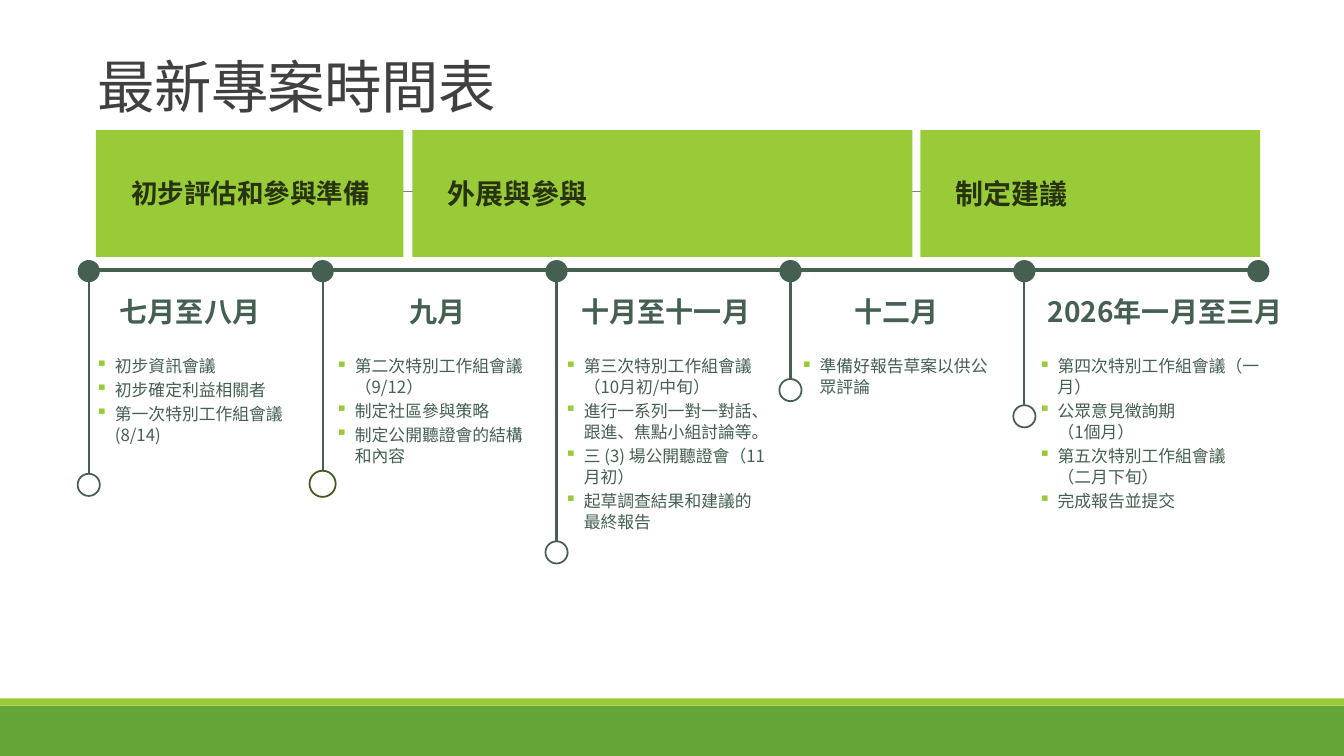
from lxml import etree
from pptx import Presentation
from pptx import util as u
from pptx.dml import color
from pptx.enum import shapes, text
from pptx.oxml import ns

LIME, GREEN, DARK, WHITE = "99CB38", "63A537", "455F51", "FFFFFF"
OLIVE, BAND_TEXT, TITLE_TEXT, GREY = "435919", "26330D", "404040", "808080"
FIRST_NODE, NODE_STEP, AXIS_Y = 0.88, 2.32, 2.68
DOT, LARGE_RING = 0.22, 0.26


def rgb(value):
    return color.RGBColor.from_string(value)


class TimelineSlide:
    font = "Noto Sans CJK SC"

    def __init__(self, presentation):
        self.slide = presentation.slides.add_slide(presentation.slide_layouts[6])

    def shape(self, kind, left, top, width, height, fill=None, line=None):
        shape = self.slide.shapes.add_shape(
            kind, u.Inches(left), u.Inches(top), u.Inches(width), u.Inches(height))
        shape.shadow.inherit = False
        if fill:
            shape.fill.solid()
            shape.fill.fore_color.rgb = rgb(fill)
        else:
            shape.fill.background()
        if line:
            shape.line.color.rgb = rgb(line)
            shape.line.width = u.Pt(1.25)
        else:
            shape.line.fill.background()
        return shape

    def rectangle(self, left, top, width, height, fill):
        return self.shape(shapes.MSO_SHAPE.RECTANGLE, left, top, width, height, fill)

    def circle(self, x, y, size, fill=None, line=None):
        return self.shape(shapes.MSO_SHAPE.OVAL, x - size / 2, y - size / 2,
                          size, size, fill, line)

    def line(self, x1, y1, x2, y2, ink, width):
        line = self.slide.shapes.add_connector(
            shapes.MSO_CONNECTOR.STRAIGHT,
            u.Inches(x1), u.Inches(y1), u.Inches(x2), u.Inches(y2))
        line.line.color.rgb = rgb(ink)
        line.line.width = u.Pt(width)
        etree.SubElement(line._element.spPr, ns.qn("a:effectLst"))

    def frame(self, shape, insets, anchor=text.MSO_ANCHOR.TOP):
        frame = shape.text_frame
        frame.word_wrap = True
        frame.vertical_anchor = anchor
        (frame.margin_left, frame.margin_top,
         frame.margin_right, frame.margin_bottom) = map(u.Inches, insets)
        return frame

    def text_box(self, left, top, width, height, insets, anchor=text.MSO_ANCHOR.TOP):
        box = self.slide.shapes.add_textbox(
            u.Inches(left), u.Inches(top), u.Inches(width), u.Inches(height))
        return self.frame(box, insets, anchor)

    def style_text(self, paragraph, words, size, ink, bold=False, spacing=0.9,
                   align=text.PP_ALIGN.LEFT, after=2, tracking=0):
        paragraph.text = words
        paragraph.alignment = align
        paragraph.line_spacing = spacing
        paragraph.space_after = u.Pt(after)
        for run in paragraph.runs:
            run.font.size = u.Pt(size)
            run.font.bold = bold
            run.font.color.rgb = rgb(ink)
            run.font.name = self.font
            properties = run._r.get_or_add_rPr()
            etree.SubElement(properties, ns.qn("a:ea"), typeface=self.font)
            if tracking:
                properties.set("spc", str(tracking))

    def bullet(self, paragraph):
        properties = paragraph._p.get_or_add_pPr()
        indent = u.Inches(0.19)
        properties.set("marL", str(indent))
        properties.set("indent", str(-indent))
        bullet_color = etree.SubElement(properties, ns.qn("a:buClr"))
        etree.SubElement(bullet_color, ns.qn("a:srgbClr"), val=LIME)
        etree.SubElement(properties, ns.qn("a:buChar"), char="▪")

    def band(self, left, width, words, size):
        shape = self.rectangle(left, 1.29, width, 1.26, LIME)
        frame = self.frame(shape, (0.35, 0.5, 0, 0.05))
        self.style_text(frame.paragraphs[0], words, size, BAND_TEXT, bold=True)

    def period(self, left, width, height, heading, tasks):
        frame = self.text_box(left, 2.91, width, height, (0, 0.05, 0, 0.05))
        self.style_text(frame.paragraphs[0], heading, 20, DARK, bold=True,
                        align=text.PP_ALIGN.CENTER, after=19)
        for task in tasks:
            paragraph = frame.add_paragraph()
            self.style_text(paragraph, task, 12, DARK, spacing=u.Pt(15))
            self.bullet(paragraph)


# Phase bands: left, width, label, text size
BANDS = [
    (0.95, 3.05, "初步評估和參與準備", 19),
    (4.09, 4.96, "外展與參與", 20),
    (9.13, 3.37, "制定建議", 20),
]

# Periods: ring centre, ring size, ring line, text box, heading, tasks
PERIODS = [
    (4.81, DOT, DARK, (0.95, 1.87, 1.66), "七月至八月",
     ["初步資訊會議", "初步確定利益相關者", "第一次特別工作組會議 (8/14)"]),
    (4.8, LARGE_RING, OLIVE, (3.33, 2.01, 2.31), "九月",
     ["第二次特別工作組會議\n（9/12）", "制定社區參與策略", "制定公開聽證會的結構和內容"]),
    (5.48, DOT, DARK, (5.6, 2.01, 2.31), "十月至十一月",
     ["第三次特別工作組會議（10月初/中旬）", "進行一系列一對一對話、跟進、焦點小組討論等。",
      "三 (3) 場公開聽證會（11 月初）", "起草調查結果和建議的最終報告"]),
    (3.87, DOT, DARK, (7.94, 1.9, 0.92), "十二月",
     ["準備好報告草案以供公眾評論"]),
    (4.13, DOT, DARK, (10.3, 2.51, 0.92), "2026年一月至三月",
     ["第四次特別工作組會議（一月）", "公眾意見徵詢期\n（1個月）",
      "第五次特別工作組會議\n（二月下旬）", "完成報告並提交"]),
]


def main():
    presentation = Presentation()
    presentation.slide_width = u.Inches(13.33)
    presentation.slide_height = u.Inches(7.5)
    timeline = TimelineSlide(presentation)

    # Footer stripes
    timeline.rectangle(0, 7, 13.33, 0.5, GREEN)
    timeline.rectangle(0, 6.93, 13.33, 0.07, LIME)

    # Title
    title = timeline.text_box(0.87, 0.46, 11.64, 0.78, (0.1, 0.05, 0.1, 0.05),
                              text.MSO_ANCHOR.BOTTOM)
    timeline.style_text(title.paragraphs[0], "最新專案時間表", 41, TITLE_TEXT,
                        spacing=0.85, after=0, tracking=-50)

    # Phase bands on their thin link
    timeline.line(1.31, 1.9, 12.21, 1.9, GREY, 0.5)
    for band in BANDS:
        timeline.band(*band)

    # Time axis with its nodes
    nodes = [FIRST_NODE + NODE_STEP * i for i in range(len(PERIODS) + 1)]
    timeline.line(nodes[0], AXIS_Y, nodes[-1], AXIS_Y, DARK, 3.25)
    for x in nodes:
        timeline.circle(x, AXIS_Y + 0.01, DOT, fill=DARK)

    # Stems, rings and period texts
    for x, (ring_y, size, ink, box, heading, tasks) in zip(nodes, PERIODS):
        timeline.line(x, AXIS_Y, x, ring_y - size / 2, DARK, 1.5)
        timeline.circle(x, ring_y, size, fill=WHITE, line=ink)
        timeline.period(*box, heading, tasks)

    presentation.save("out.pptx")


if __name__ == "__main__":
    main()
